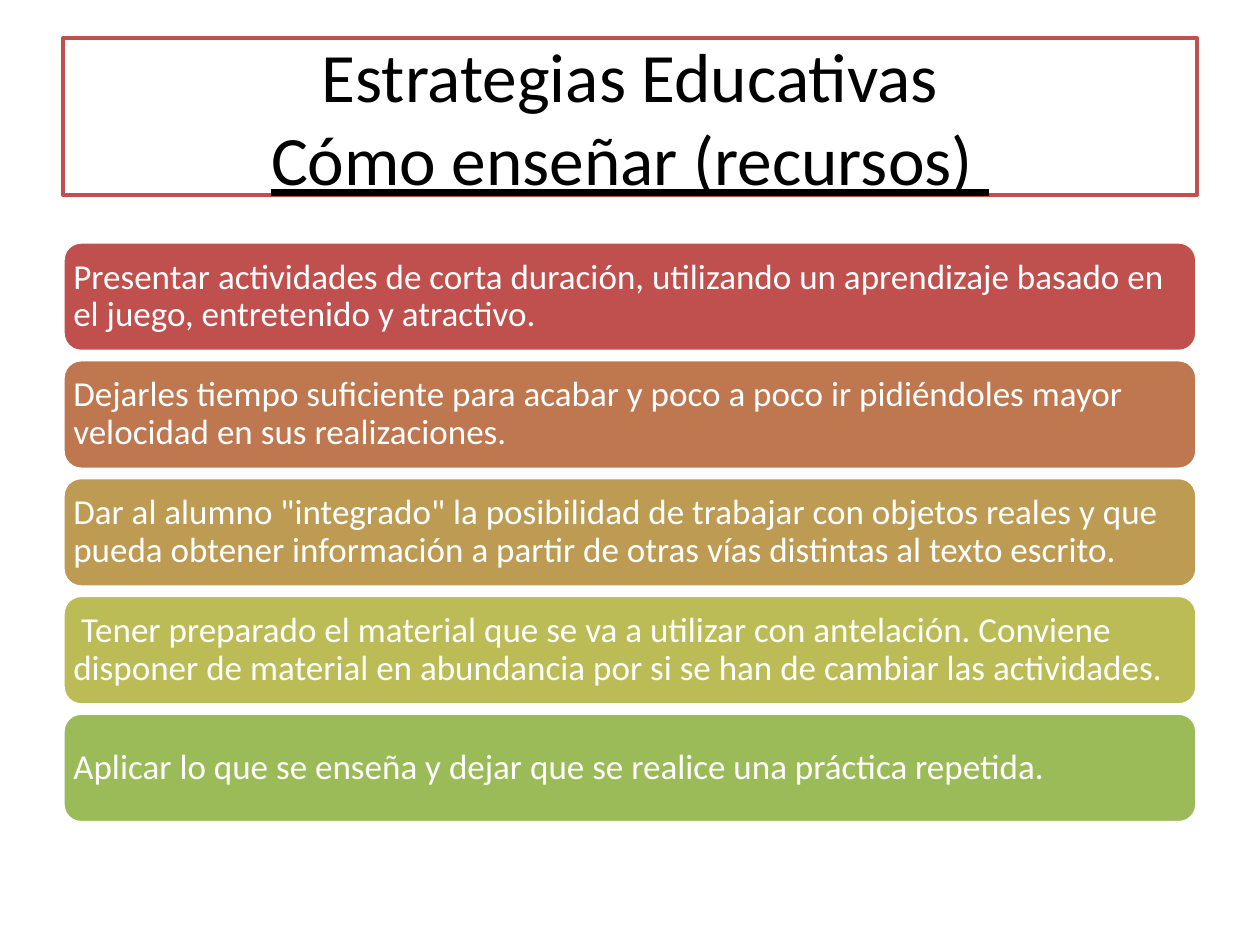
from dataclasses import dataclass

from pptx import Presentation
from pptx.dml.color import RGBColor
from pptx.enum.shapes import MSO_SHAPE as Shape
from pptx.enum.text import MSO_ANCHOR as Anchor, MSO_AUTO_SIZE as AutoSize, PP_ALIGN as Align
from pptx.util import Inches, Pt

# Content
TITLE_LINES = [
    ("Estrategias Educativas", False),
    ("Cómo enseñar (recursos) ", True),  # underlined
]
STRATEGIES = [
    ("Presentar actividades de corta duración, utilizando un aprendizaje basado en "
     "el juego, entretenido y atractivo.", "C0504D"),
    ("Dejarles tiempo suficiente para acabar y poco a poco ir pidiéndoles mayor "
     "velocidad en sus realizaciones.", "BF7750"),
    ('Dar al alumno "integrado" la posibilidad de trabajar con objetos reales y que '
     "pueda obtener información a partir de otras vías distintas al texto escrito.", "BD9B53"),
    (" Tener preparado el material que se va a utilizar con antelación. Conviene "
     "disponer de material en abundancia por si se han de cambiar las actividades.", "BCBC56"),
    ("Aplicar lo que se enseña y dejar que se realice una práctica repetida.", "9BBB59"),
]


@dataclass(frozen=True)
class Theme:
    font: str = "Calibri"
    title_size: float = 39.6
    body_size: float = 20
    line_width: float = 2
    dark: str = "000000"
    light: str = "FFFFFF"
    accent: str = "C0504D"


THEME = Theme()

# Layout in inches
LEFT, WIDTH = 0.5, 9
TITLE_TOP, TITLE_HEIGHT = 0.3, 1.25
FIRST_TOP, LAST_TOP, BAR_HEIGHT = 1.92, 5.66, 0.87
BAR_PITCH = (LAST_TOP - FIRST_TOP) / (len(STRATEGIES) - 1)
BAR_INSET = 0.04  # the rounded corners add about as much again


def add_text(paragraph, text, *, size, color, underline=None):
    run = paragraph.add_run()
    run.text = text
    run.font.name = THEME.font
    run.font.size = Pt(size)
    run.font.underline = underline
    run.font.color.rgb = RGBColor.from_string(color)


def paint(shape, fill, line):
    shape.fill.solid()
    shape.fill.fore_color.rgb = RGBColor.from_string(fill)
    shape.line.color.rgb = RGBColor.from_string(line)
    shape.line.width = Pt(THEME.line_width)


def add_title(slide):
    title = slide.shapes.title
    title.left, title.top = Inches(LEFT), Inches(TITLE_TOP)
    title.width, title.height = Inches(WIDTH), Inches(TITLE_HEIGHT)
    paint(title, THEME.light, THEME.accent)
    frame = title.text_frame
    frame.auto_size = AutoSize.NONE
    frame.vertical_anchor = Anchor.MIDDLE
    paragraph = frame.paragraphs[0]
    paragraph.alignment = Align.CENTER
    for index, (text, underlined) in enumerate(TITLE_LINES):
        if index:
            paragraph.add_line_break()
        add_text(paragraph, text, size=THEME.title_size, color=THEME.dark,
                 underline=underlined or None)


def add_bar(slide, top, text, fill):
    bar = slide.shapes.add_shape(Shape.ROUNDED_RECTANGLE, Inches(LEFT), Inches(top),
                                 Inches(WIDTH), Inches(BAR_HEIGHT))
    bar.shadow.inherit = False
    paint(bar, fill, THEME.light)
    frame = bar.text_frame
    frame.word_wrap = True
    frame.vertical_anchor = Anchor.MIDDLE
    frame.margin_left = frame.margin_right = Inches(BAR_INSET)
    frame.margin_top = frame.margin_bottom = Inches(BAR_INSET)
    paragraph = frame.paragraphs[0]
    paragraph.alignment = Align.LEFT
    paragraph.line_spacing = 0.9
    add_text(paragraph, text, size=THEME.body_size, color=THEME.light)


def main():
    presentation = Presentation()
    presentation.slide_width, presentation.slide_height = Inches(10), Inches(7.5)
    slide = presentation.slides.add_slide(presentation.slide_layouts.get_by_name("Title Only"))

    # Framed title
    add_title(slide)

    # Evenly spaced strategy bars
    for index, (text, fill) in enumerate(STRATEGIES):
        add_bar(slide, FIRST_TOP + index * BAR_PITCH, text, fill)

    presentation.save("out.pptx")


if __name__ == "__main__":
    main()
